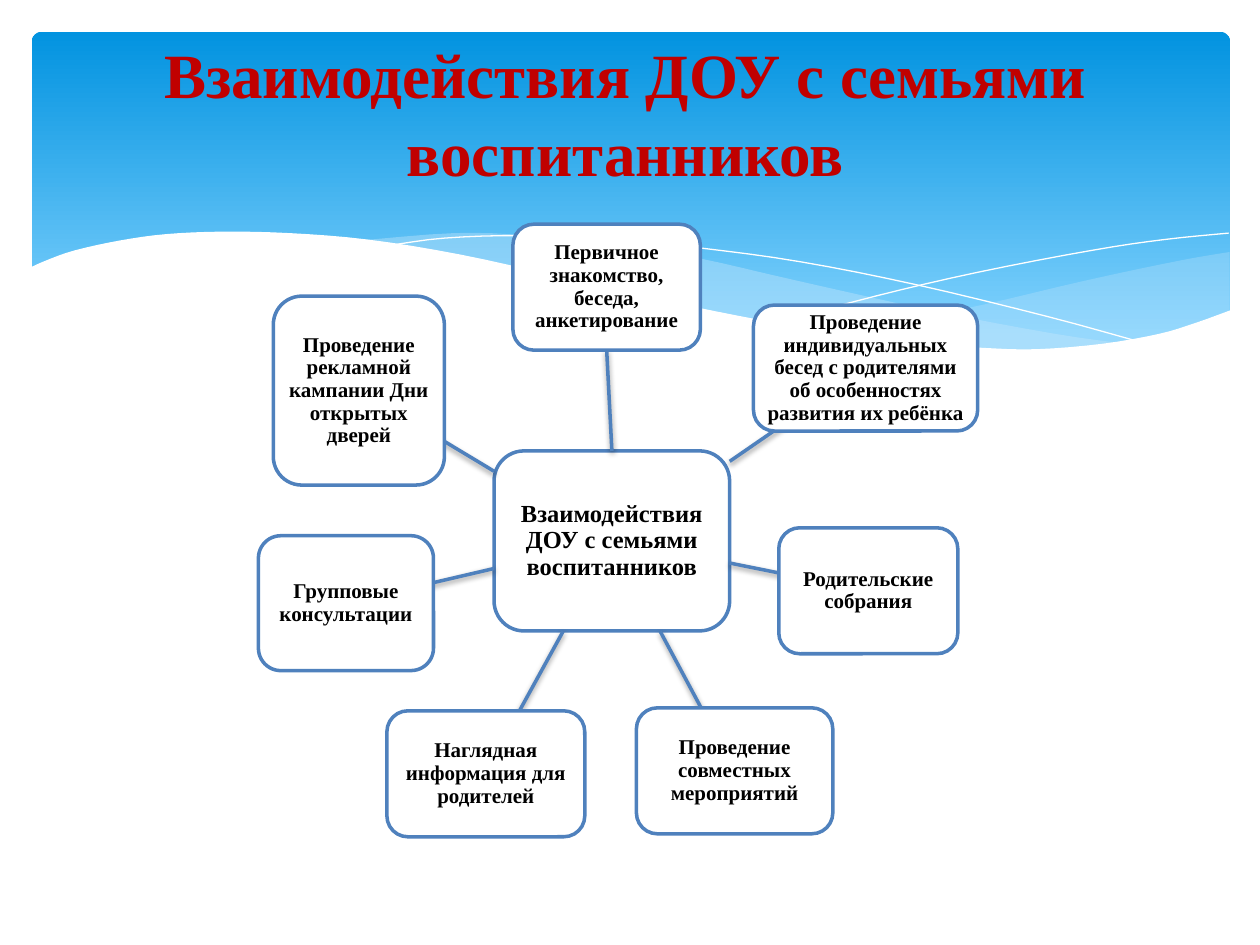
"""Build a slide with a hub-and-spoke diagram on a wave background."""
from lxml import etree
from pptx import Presentation
from pptx.dml.color import RGBColor
from pptx.enum import shapes, text
from pptx.oxml import ns
from pptx.util import Cm, Pt

FONT = "Times New Roman"
WHITE = RGBColor(0xFF, 0xFF, 0xFF)
BLACK = RGBColor(0, 0, 0)
RED = RGBColor(0xC0, 0, 0)
BLUE = RGBColor(0x4F, 0x81, 0xBD)
SKY_TOP = RGBColor(0x02, 0x93, 0xE0)
SKY_BOTTOM = RGBColor(0x83, 0xD3, 0xFE)
RIBBON = RGBColor(0xC6, 0xE7, 0xFC)

TITLE = "Взаимодействия ДОУ с семьями воспитанников"
TITLE_BOX = (1.09, 0.94, 23.04, 2.59)
PANEL_BOX = (0.64, 0.64, 24.16, 6.86)
HUB_BOX = (9.96, 9.09, 4.75, 3.63)

NODES = [
    ("Первичное знакомство, беседа, анкетирование",
     (10.34, 4.52, 3.78, 2.54), (12.29, 9.09, 12.24, 6.99)),
    ("Проведение индивидуальных бесед с родителями об особенностях развития их ребёнка",
     (15.19, 6.15, 4.52, 2.54), (14.71, 9.3, 15.9, 8.48)),
    ("Родительские собрания",
     (15.7, 10.64, 3.61, 2.54), (14.71, 11.35, 16.1, 11.63)),
    ("Проведение совместных мероприятий",
     (12.83, 14.27, 3.96, 2.54), (13.31, 12.73, 14.15, 14.3)),
    ("Наглядная информация для родителей",
     (7.8, 14.33, 3.99, 2.54), (11.35, 12.73, 10.46, 14.35)),
    ("Групповые консультации",
     (5.21, 10.8, 3.53, 2.72), (9.96, 11.46, 8.33, 11.84)),
    ("Проведение рекламной кампании Дни открытых дверей",
     (5.51, 5.97, 3.45, 3.81), (9.96, 9.5, 8.53, 8.64)),
]

RIGHT_RIBBON = [
    [(24.79, 5.08), (23.75, 5.26), (21.87, 5.66), (19.79, 6.15), (17.93, 6.53), (16.79, 6.73)],
    [(16.79, 6.73), (17.91, 6.88), (19.23, 7.01), (20.68, 7.06), (22.15, 6.96), (23.39, 6.73),
     (24.79, 6.27)],
]
LEFT_RIBBON = [
    [(22.68, 6.93), (21.26, 6.73), (18.82, 6.27), (15.98, 5.64), (14.1, 5.21), (12.42, 4.93),
     (10.67, 4.75), (9.17, 4.7), (7.26, 4.85)],
    [(7.26, 4.85), (8.69, 5.05), (10.26, 5.36), (12.47, 5.89), (14.83, 6.4), (16.89, 6.76),
     (18.69, 6.99), (20.5, 7.06), (21.77, 7.04), (22.68, 6.93)],
]
THIN_LINES = [
    [(7.85, 4.95), (8.97, 4.8), (10.57, 4.75), (12.42, 4.83), (14.12, 5), (16.15, 5.28),
     (18.47, 5.74), (21.11, 6.38), (23.04, 6.91)],
    [(15.57, 6.53), (17.65, 5.97), (19.71, 5.49), (22, 5.05), (23.47, 4.83), (24.77, 4.7)],
]
WAVE = [
    [(0.58, 5.41), (0.91, 5.26), (1.5, 5.05), (2.41, 4.85), (3.35, 4.72), (4.5, 4.67),
     (5.84, 4.7), (7.42, 4.83), (9.27, 5.13), (11.35, 5.59), (13.44, 6.07), (15.32, 6.45),
     (16.97, 6.73), (18.44, 6.91), (19.76, 7.01), (20.9, 7.04), (22.23, 6.93), (23.37, 6.73),
     (24.13, 6.5), (24.82, 6.25)],
    [(24.82, 8.36), (0.58, 8.36)],
]


def smooth(points, steps=4):
    """Return points along a Catmull-Rom curve."""
    ext = [points[0], *points, points[-1]]
    out = []
    for a, b, c, d in zip(ext, ext[1:], ext[2:], ext[3:]):
        for t in (k / steps for k in range(steps)):
            out.append(tuple(
                (2 * q + (r - p) * t + (2 * p - 5 * q + 4 * r - v) * t ** 2
                 + (3 * q - p - 3 * r + v) * t ** 3) / 2
                for p, q, r, v in zip(a, b, c, d)))
    return out + [points[-1]]


def add_curve(s, curves, fill=None, alpha=None):
    """Draw a filled outline, or a thin white line when there is no fill."""
    pts = [(Cm(x), Cm(y)) for c in curves for x, y in smooth(c)]
    fb = s.shapes.build_freeform(*pts[0])
    fb.add_line_segments(pts[1:], close=fill is not None)
    sp = fb.convert_to_shape()
    sp.shadow.inherit = False
    if fill is None:
        sp.fill.background()
        sp.line.color.rgb = WHITE
        sp.line.width = Pt(0)
        return
    sp.fill.solid()
    sp.fill.fore_color.rgb = fill
    sp.line.fill.background()
    if alpha:
        clr = sp._element.spPr.find(".//" + ns.qn("a:srgbClr"))
        etree.SubElement(clr, ns.qn("a:alpha")).set("val", str(alpha * 1000))


def set_text(sp, words, size, color, margin, spacing):
    """Write one centred bold paragraph."""
    tf = sp.text_frame
    tf.text = words
    tf.word_wrap = True
    tf.vertical_anchor = text.MSO_ANCHOR.MIDDLE
    tf.margin_left = tf.margin_right = tf.margin_top = tf.margin_bottom = Cm(margin)
    p = tf.paragraphs[0]
    p.alignment = text.PP_ALIGN.CENTER
    p.line_spacing = spacing
    f = p.runs[0].font
    f.name, f.size, f.bold = FONT, Pt(size), True
    f.color.rgb = color


def add_node(s, words, box, size, margin):
    """Add a rounded box with text."""
    sp = s.shapes.add_shape(shapes.MSO_SHAPE.ROUNDED_RECTANGLE, *map(Cm, box))
    sp.shadow.inherit = False
    sp.fill.solid()
    sp.fill.fore_color.rgb = WHITE
    sp.line.color.rgb = BLUE
    sp.line.width = Pt(2)
    set_text(sp, words, size, BLACK, margin, 0.9)
    return sp


def add_spoke(s, ends):
    """Add a connector with a soft shadow below it."""
    c = s.shapes.add_connector(shapes.MSO_CONNECTOR.STRAIGHT, *map(Cm, ends))
    c.line.color.rgb = BLUE
    c.line.width = Pt(2)
    effects = etree.SubElement(c._element.spPr, ns.qn("a:effectLst"))
    shadow = etree.SubElement(effects, ns.qn("a:outerShdw"), blurRad="40000", dist="20000",
                              dir="5400000", rotWithShape="0")
    clr = etree.SubElement(shadow, ns.qn("a:srgbClr"), val="000000")
    etree.SubElement(clr, ns.qn("a:alpha"), val="38000")
    return c


def add_background(s):
    """Add the gradient panel and the waves."""
    sp = s.shapes.add_shape(shapes.MSO_SHAPE.ROUNDED_RECTANGLE, *map(Cm, PANEL_BOX))
    sp.adjustments[0] = 0.03
    sp.shadow.inherit = False
    sp.line.fill.background()
    sp.fill.gradient()
    sp.fill.gradient_angle = 270
    for stop, color, pos in zip(sp.fill.gradient_stops, (SKY_TOP, SKY_BOTTOM), (0, 0.9)):
        stop.color.rgb = color
        stop.position = pos
    add_curve(s, RIGHT_RIBBON, RIBBON, 29)
    add_curve(s, LEFT_RIBBON, RIBBON, 40)
    for line in THIN_LINES:
        add_curve(s, [line])
    add_curve(s, WAVE, WHITE)


def main():
    """Build and save the slide."""
    prs = Presentation()
    prs.slide_width, prs.slide_height = Cm(25.4), Cm(19.05)
    s = prs.slides.add_slide(prs.slide_layouts[6])
    add_background(s)
    set_text(s.shapes.add_textbox(*map(Cm, TITLE_BOX)), TITLE, 36, RED, 0.2, 1.04)
    hub = add_node(s, TITLE, HUB_BOX, 14, 0.1)
    for i, (words, box, ends) in enumerate(NODES):
        spoke = add_spoke(s, ends)
        node = add_node(s, words, box, 12, 0.08)
        if i == 0:
            spoke.begin_connect(hub, 0)
            spoke.end_connect(node, 2)
    prs.save("out.pptx")


if __name__ == "__main__":
    main()
